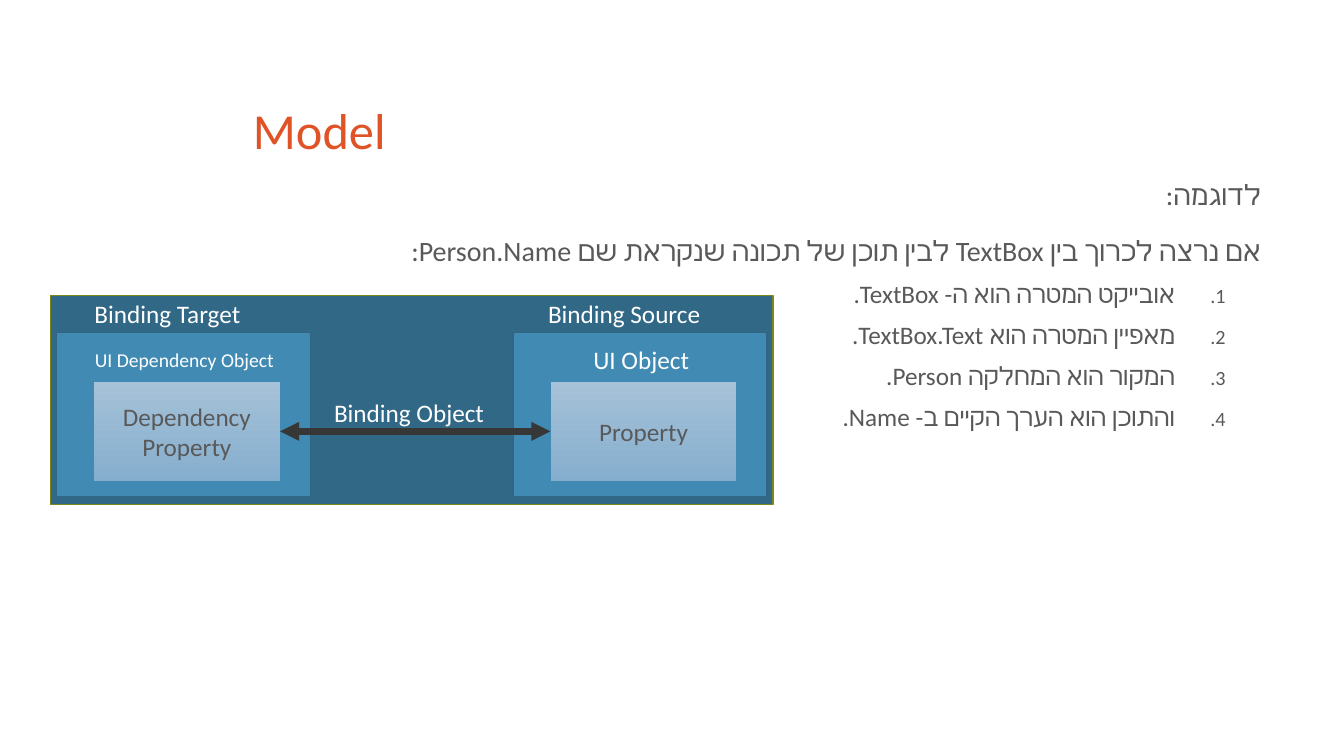
from lxml.etree import SubElement
from pptx import Presentation
from pptx.dml.color import RGBColor
from pptx.enum.shapes import MSO_CONNECTOR, MSO_SHAPE
from pptx.enum.text import MSO_ANCHOR, MSO_AUTO_SIZE, PP_ALIGN
from pptx.oxml.ns import qn
from pptx.util import Cm, Pt

FONT = "Calibri"
COLORS = {
    "title": "DF5327",
    "text": "595959",
    "white": "FFFFFF",
    "panel": "316886",
    "panel_line": "7B871D",
    "block": "418AB3",
    "block_line": "306684",
    "property_top": "A6C2D8",
    "property_bottom": "85AECE",
    "arrow": "373737",
}
INTRODUCTION = [
    "לדוגמה:",
    "אם נרצה לכרוך בין TextBox לבין תוכן של תכונה שנקראת שם Person.Name:",
]
STEPS = [
    "אובייקט המטרה הוא ה- TextBox.",
    "מאפיין המטרה הוא TextBox.Text.",
    "המקור הוא המחלקה Person.",
    "והתוכן הוא הערך הקיים ב- Name.",
]
INTRODUCTION_FORMAT = {"level": 0, "space_before": Pt(18), "line_spacing": 0.9,
                       "alignment": PP_ALIGN.RIGHT}
STEP_FORMAT = {**INTRODUCTION_FORMAT, "level": 1, "space_before": Pt(10)}
TITLE_FORMAT = {"line_spacing": 0.9, "alignment": PP_ALIGN.LEFT}


def color(name):
    return RGBColor.from_string(COLORS[name])


def set_attributes(target, values):
    for name, value in values.items():
        setattr(target, name, value)


def place(shape, box):
    set_attributes(shape, dict(zip(("left", "top", "width", "height"), map(Cm, box))))


def format_font(font, size, color_name):
    set_attributes(font, {"name": FONT, "size": Pt(size)})
    font.color.rgb = color(color_name)


def write_rtl(paragraph, text, size, color_name, values):
    """Write one right-to-left run, with the font for Hebrew letters too."""
    paragraph._p.get_or_add_pPr().set("rtl", "1")
    set_attributes(paragraph, values)
    run = paragraph.add_run()
    run.text = text
    format_font(run.font, size, color_name)
    SubElement(run._r.get_or_add_rPr(), qn("a:cs"), typeface=FONT)


def set_list_style(paragraph, numbered):
    properties = paragraph._p.get_or_add_pPr()
    margin, indent = (2.29, -1.27) if numbered else (0.13, 0)
    properties.set("marL", str(Cm(margin)))
    properties.set("indent", str(Cm(indent)))
    if numbered:
        SubElement(properties, qn("a:buSzPct"), val="80000")
        SubElement(properties, qn("a:buFont"), typeface="Arial")
        SubElement(properties, qn("a:buAutoNum"), type="arabicPeriod")
    else:
        SubElement(properties, qn("a:buNone"))


def fill_title(title, box):
    place(title, box)
    frame = title.text_frame
    set_attributes(frame, {"vertical_anchor": MSO_ANCHOR.BOTTOM,
                           "auto_size": MSO_AUTO_SIZE.NONE})
    write_rtl(frame.paragraphs[0], "Model", 36, "title", TITLE_FORMAT)


def fill_body(body, box):
    place(body, box)
    frame = body.text_frame
    frame.auto_size = MSO_AUTO_SIZE.NONE
    for index, text in enumerate(INTRODUCTION + STEPS):
        paragraph = frame.paragraphs[0] if index == 0 else frame.add_paragraph()
        numbered = text in STEPS
        set_list_style(paragraph, numbered)
        write_rtl(paragraph, text, 18 if numbered else 20, "text",
                  STEP_FORMAT if numbered else INTRODUCTION_FORMAT)
    frame.paragraphs[0].space_before = Pt(0)


def write_centered(shape, text, size, color_name):
    frame = shape.text_frame
    set_attributes(frame, {"text": text, "word_wrap": True,
                           "vertical_anchor": MSO_ANCHOR.MIDDLE})
    paragraph = frame.paragraphs[0]
    paragraph.alignment = PP_ALIGN.CENTER
    for run in paragraph.runs:
        format_font(run.font, size, color_name)


def add_rectangle(shapes, box, fill, line=None, line_width=1):
    """Add a rectangle; a pair of fill names makes a vertical gradient."""
    shape = shapes.add_shape(MSO_SHAPE.RECTANGLE, *map(Cm, box))
    shape.shadow.inherit = False
    if isinstance(fill, tuple):
        shape.fill.gradient()
        shape.fill.gradient_angle = 270
        for stop, name in zip(shape.fill.gradient_stops, fill):
            stop.color.rgb = color(name)
    else:
        shape.fill.solid()
        shape.fill.fore_color.rgb = color(fill)
    if line:
        shape.line.color.rgb = color(line)
        shape.line.width = Pt(line_width)
    else:
        shape.line.fill.background()
    return shape


def add_block(shapes, left, top, header, caption, caption_size, property_text):
    """Add one side of the binding and return its property rectangle."""
    add_rectangle(shapes, (left, top, 6.4, 4.14), "block", "block_line")
    caption_shape = add_rectangle(shapes, (left + 0.12, top + 0.1, 6.22, 1.17), "block")
    write_centered(caption_shape, caption, caption_size, "white")
    property_shape = add_rectangle(shapes, (left + 0.94, top + 1.22, 4.7, 2.54),
                                   ("property_top", "property_bottom"), "block", 0.5)
    write_centered(property_shape, property_text, 18, "text")
    header_shape = add_rectangle(shapes, (left + 0.36, top - 0.9, 4.88, 0.84), "panel")
    write_centered(header_shape, header, 18, "white")
    return property_shape


def add_double_arrow(shapes, start, end):
    arrow = shapes.add_connector(MSO_CONNECTOR.STRAIGHT, 0, 0, 0, 0)
    arrow.begin_connect(start, 3)
    arrow.end_connect(end, 1)
    arrow.line.color.rgb = color("arrow")
    arrow.line.width = Pt(4.5)
    line = arrow.line._get_or_add_ln()
    for tag in ("a:headEnd", "a:tailEnd"):
        SubElement(line, qn(tag), type="triangle")
    SubElement(arrow._element.spPr, qn("a:effectLst"))


def add_binding_diagram(slide, box):
    left, top, width, height = box
    shapes = slide.shapes.add_group_shape().shapes
    add_rectangle(shapes, box, "panel", "panel_line")
    source = add_block(shapes, left + 11.66, top + 0.94, "Binding Source",
                       "UI Object", 18, "Property")
    target = add_block(shapes, left + 0.15, top + 0.94, "Binding Target",
                       "UI Dependency Object", 14, "Dependency\vProperty")
    add_double_arrow(shapes, target, source)
    label = shapes.add_textbox(*map(Cm, (left + 6.6, top + 2.54, 4.88, 0.84)))
    write_centered(label, "Binding Object", 18, "white")


def main():
    presentation = Presentation()
    presentation.slide_width = Cm(33.87)
    presentation.slide_height = Cm(19.05)
    slide = presentation.slides.add_slide(presentation.slide_layouts[1])
    fill_title(slide.shapes.title, (6.12, 0.84, 26.04, 3.33))
    fill_body(slide.placeholders[1], (6.12, 4.45, 26.04, 11.43))
    add_binding_diagram(slide, (1.27, 7.44, 18.21, 5.28))
    presentation.save("out.pptx")


if __name__ == "__main__":
    main()
